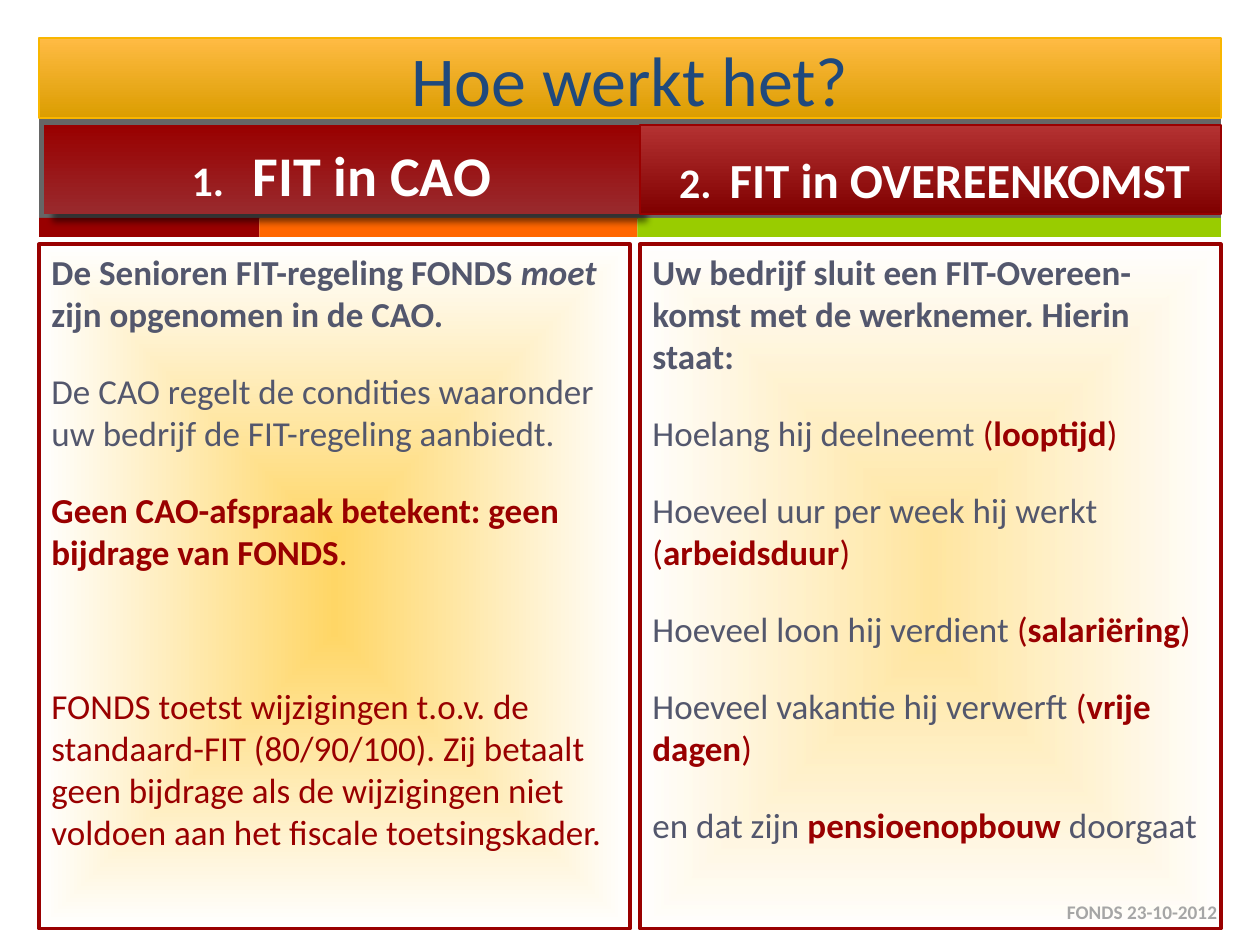
from dataclasses import dataclass

from lxml import etree
from pptx import Presentation
from pptx.dml.color import RGBColor
from pptx.enum.shapes import MSO_SHAPE
from pptx.enum.text import MSO_ANCHOR, PP_ALIGN
from pptx.oxml import parse_xml
from pptx.oxml.ns import nsdecls, qn
from pptx.util import Inches, Pt

RECTANGLE = MSO_SHAPE.RECTANGLE
TOP, MIDDLE, BOTTOM = MSO_ANCHOR.TOP, MSO_ANCHOR.MIDDLE, MSO_ANCHOR.BOTTOM
LEFT, CENTER, RIGHT = PP_ALIGN.LEFT, PP_ALIGN.CENTER, PP_ALIGN.RIGHT


@dataclass(frozen=True)
class Theme:
    font: str = "Calibri"
    slate: str = "53576D"
    red: str = "990000"
    orange: str = "FF6600"
    green: str = "99CC00"
    white: str = "FFFFFF"
    navy: str = "1F497D"
    dark: str = "262626"
    grey: str = "A6A6A6"
    gold_line: str = "F9B600"
    gold: tuple = ("FFBB44", "DB9D00")
    red_left: tuple = ("990000", "992A2D")
    red_right: tuple = ("B43232", "800000")
    glow: tuple = ("FFD666", "FFFFFF")
    title_size: int = 40
    number_size: int = 24
    left_heading_size: int = 32
    right_heading_size: int = 28
    body_size: int = 20
    footer_size: int = 11


THEME = Theme()
MARGIN, WIDTH = 0.31, 9.38
RIGHT_COLUMN, RIGHT_WIDTH = 5.08, 4.61
HEADING_TOP, HEADING_HEIGHT = 0.99, 0.71
PANEL_TOP, PANEL_HEIGHT = 1.94, 5.43
BLANK_LINE = 44


def plain(text, color=THEME.slate):
    return text, {"color": color, "bold": False}


def strong(text, color=THEME.slate):
    return text, {"color": color, "bold": True}


def bracketed(lead, term):
    """Return a slate lead followed by a red term in brackets."""
    return [plain(lead), plain("(", THEME.red), strong(term, THEME.red),
            plain(")", THEME.red)]


LEFT_PARAGRAPHS = [
    [strong("De Senioren FIT-regeling FONDS "),
     ("moet", {"color": THEME.slate, "bold": True, "italic": True}),
     strong(" zijn opgenomen in de CAO.")],
    [plain("De CAO regelt de condities waaronder uw bedrijf de FIT-regeling aanbiedt.")],
    [strong("Geen CAO-afspraak betekent: geen bijdrage van FONDS", THEME.red),
     plain(".", THEME.red)],
    [plain("FONDS toetst wijzigingen t.o.v. de standaard-FIT (80/90/100). Zij betaalt "
           "geen bijdrage als de wijzigingen niet voldoen aan het fiscale "
           "toetsingskader.", THEME.red)],
]
RIGHT_PARAGRAPHS = [
    [strong("Uw bedrijf sluit een FIT-Overeen- komst met de werknemer. Hierin staat:")],
    bracketed("Hoelang hij deelneemt ", "looptijd"),
    bracketed("Hoeveel uur per week hij werkt ", "arbeidsduur"),
    bracketed("Hoeveel loon hij verdient ", "salariëring"),
    bracketed("Hoeveel vakantie hij verwerft ", "vrije dagen"),
    [plain("en dat zijn "), strong("pensioenopbouw ", THEME.red), plain("doorgaat")],
]


def set_alpha(color_element, percent):
    etree.SubElement(color_element, qn("a:alpha"), val=str(percent * 1000))


def add_box(slide, at, fill, line=None, line_width=1, alpha=None):
    """Add a rectangle; a pair of colours as fill runs from top to bottom."""
    shape = slide.shapes.add_shape(RECTANGLE, *map(Inches, at))
    shape.shadow.inherit = False
    if isinstance(fill, tuple):
        shape.fill.gradient()
        shape.fill.gradient_angle = 270
        for stop, color in zip(shape.fill.gradient_stops, fill):
            stop.color.rgb = RGBColor.from_string(color)
    else:
        shape.fill.solid()
        shape.fill.fore_color.rgb = RGBColor.from_string(fill)
    if alpha:
        fill_element = shape.element.spPr.find(
            qn("a:gradFill" if isinstance(fill, tuple) else "a:solidFill"))
        for color_element in fill_element.iter(qn("a:srgbClr")):
            set_alpha(color_element, alpha)
    if line:
        shape.line.color.rgb = RGBColor.from_string(line)
        shape.line.width = Pt(line_width)
    else:
        shape.line.fill.background()
    return shape


def glow_from_center(shape):
    """Turn the linear gradient of a shape into a rectangular one."""
    gradient = shape.element.spPr.find(qn("a:gradFill"))
    linear = gradient.find(qn("a:lin"))
    gradient.replace(linear, parse_xml(
        f'<a:path {nsdecls("a")} path="shape">'
        '<a:fillToRect l="50000" t="50000" r="50000" b="50000"/></a:path>'))


def add_drop_shadow(shape):
    effects = shape.element.spPr.find(qn("a:effectLst"))
    effects.append(parse_xml(
        f'<a:outerShdw {nsdecls("a")} blurRad="50800" dist="76200" dir="2700000" '
        'algn="tl" rotWithShape="0"><a:srgbClr val="000000">'
        '<a:alpha val="50000"/></a:srgbClr></a:outerShdw>'))


def write(shape, paragraphs, size, anchor=TOP, align=LEFT, space=0):
    frame = shape.text_frame
    frame.word_wrap = True
    frame.vertical_anchor = anchor
    for index, runs in enumerate(paragraphs):
        paragraph = frame.paragraphs[0] if index == 0 else frame.add_paragraph()
        paragraph.alignment = align
        paragraph.space_before = Pt(space)
        for text, run_format in runs:
            run = paragraph.add_run()
            run.text = text
            values = {"name": THEME.font, "size": Pt(size), **run_format}
            run.font.color.rgb = RGBColor.from_string(values.pop("color"))
            for name, value in values.items():
                setattr(run.font, name, value)
    return frame


def add_heading(slide, at, fill, number, text, size, gap, line=None):
    """Add a numbered heading; gap is the extra space after the number in points."""
    shape = add_box(slide, at, fill, line)
    white = {"color": THEME.white, "bold": True}
    small = {**white, "size": Pt(THEME.number_size)}
    frame = write(shape, [[(number, small), (" ", small), (text, white)]],
                  size, BOTTOM, CENTER, 6)
    frame.paragraphs[0].runs[1].font._element.set("spc", str(gap * 100))
    return shape


def add_panel(slide, left, width, paragraphs, alpha=None):
    at = (left, PANEL_TOP, width, PANEL_HEIGHT)
    shape = add_box(slide, at, THEME.glow, THEME.red, 2.25, alpha)
    glow_from_center(shape)
    return write(shape, paragraphs, THEME.body_size, space=20)


def main():
    presentation = Presentation()
    presentation.slide_width, presentation.slide_height = Inches(10), Inches(7.5)
    slide = presentation.slides.add_slide(presentation.slide_layouts[6])

    add_box(slide, (MARGIN, 0.5, WIDTH, 1.24), THEME.dark, alpha=70)
    left = MARGIN
    for width, color in ((1.75, THEME.red), (3, THEME.orange), (4.63, THEME.green)):
        add_box(slide, (left, 1.73, width, 0.15), color)
        left += width

    title = add_box(slide, (MARGIN, 0.3, WIDTH, 0.64), THEME.gold, THEME.gold_line)
    write(title, [[plain("Hoe werkt het?", THEME.navy)]], THEME.title_size, MIDDLE, CENTER)

    left_heading = add_heading(
        slide, (0.35, HEADING_TOP, 4.72, HEADING_HEIGHT), THEME.red_left,
        "1.", "FIT in CAO", THEME.left_heading_size, 11)
    add_drop_shadow(left_heading)
    right_heading = add_heading(
        slide, (RIGHT_COLUMN, HEADING_TOP, RIGHT_WIDTH, HEADING_HEIGHT), THEME.red_right,
        "2.", "FIT in OVEREENKOMST", THEME.right_heading_size, 5, THEME.red)
    right_heading.text_frame.margin_left = Inches(0.16)

    left_frame = add_panel(slide, MARGIN, 4.69, LEFT_PARAGRAPHS)
    left_frame.paragraphs[-1].space_before = Pt(20 + BLANK_LINE)
    add_panel(slide, RIGHT_COLUMN, RIGHT_WIDTH, RIGHT_PARAGRAPHS, alpha=62)

    footer = slide.shapes.add_textbox(*map(Inches, (7.43, 7.04, 2.33, 0.4)))
    write(footer, [[strong("FONDS 23-10-2012", THEME.grey)]],
          THEME.footer_size, MIDDLE, RIGHT)

    presentation.save("out.pptx")


if __name__ == "__main__":
    main()
